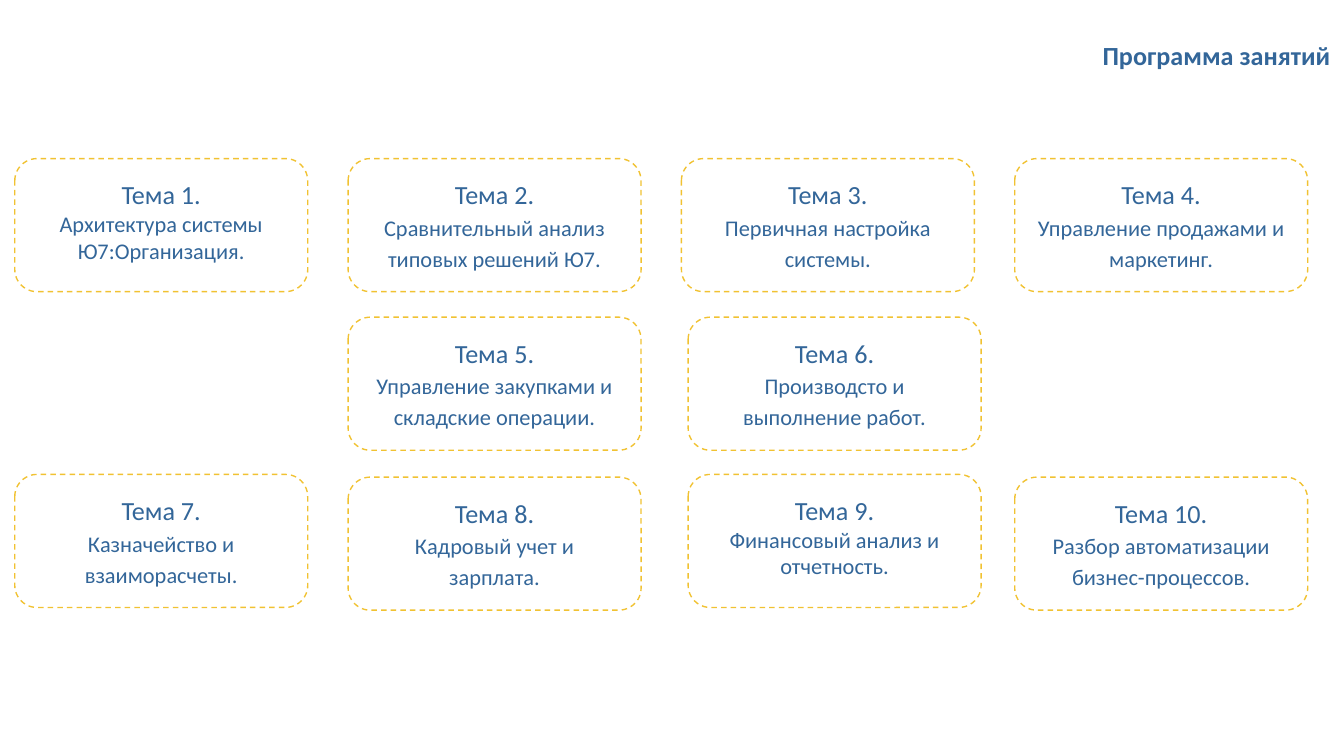
from dataclasses import dataclass

from pptx import Presentation
from pptx.dml.color import RGBColor
from pptx.enum.dml import MSO_LINE
from pptx.enum.shapes import MSO_SHAPE
from pptx.enum.text import MSO_ANCHOR, MSO_AUTO_SIZE, PP_ALIGN
from pptx.slide import Slide
from pptx.text.text import TextFrame
from pptx.util import Inches, Pt


@dataclass(frozen=True)
class Theme:
    font: str = "Calibri"
    ink: RGBColor = RGBColor(0x33, 0x66, 0x99)
    border: RGBColor = RGBColor(0xF1, 0xC2, 0x32)
    paper: RGBColor = RGBColor(0xFF, 0xFF, 0xFF)
    heading_size: float = 14
    body_size: float = 12
    border_width: float = 0.75
    inset: float = 0.1


@dataclass(frozen=True)
class Topic:
    number: int
    subject: str
    column: int
    top: float
    shift: float = 0
    spacing: float = 1.15
    lift: float = 0


THEME = Theme()
SLIDE_WIDTH = 10
SLIDE_HEIGHT = SLIDE_WIDTH * 9 / 16
CARD_WIDTH, CARD_HEIGHT = 2.18, 0.99
FIRST_LEFT, COLUMN_STEP = 0.11, 2.48
TOP_ROW, MIDDLE_ROW, BOTTOM_ROW, LOWERED_ROW = 1.18, 2.36, 3.53, 3.55

TOPICS = [
    Topic(1, "Архитектура системы Ю7:Организация.", 0, TOP_ROW, spacing=1, lift=0.06),
    Topic(2, "Сравнительный анализ типовых решений Ю7.", 1, TOP_ROW),
    Topic(3, "Первичная настройка системы.", 2, TOP_ROW),
    Topic(4, "Управление продажами и маркетинг.", 3, TOP_ROW),
    Topic(5, "Управление закупками и складские операции.", 1, MIDDLE_ROW),
    Topic(6, "Производсто и выполнение работ.", 2, MIDDLE_ROW, shift=0.05),
    Topic(7, "Казначейство и взаиморасчеты.", 0, BOTTOM_ROW),
    Topic(8, "Кадровый учет и зарплата.", 1, LOWERED_ROW),
    Topic(9, "Финансовый анализ и отчетность.", 2, BOTTOM_ROW, shift=0.05, spacing=1, lift=0.06),
    Topic(10, "Разбор автоматизации бизнес-процессов.", 3, LOWERED_ROW),
]


def prepare_frame(frame: TextFrame, anchor: MSO_ANCHOR, lift: float = 0) -> None:
    frame.word_wrap = True
    frame.auto_size = MSO_AUTO_SIZE.NONE
    frame.vertical_anchor = anchor
    frame.margin_left = frame.margin_right = frame.margin_top = Inches(THEME.inset)
    frame.margin_bottom = Inches(THEME.inset + lift)


def format_paragraph(paragraph, size: float, align: PP_ALIGN, bold: bool = False) -> None:
    paragraph.alignment = align
    for run in paragraph.runs:
        run.font.name = THEME.font
        run.font.size = Pt(size)
        run.font.bold = bold
        run.font.color.rgb = THEME.ink


def draw_title(slide: Slide, wording: str) -> None:
    title = slide.shapes.title
    title.left, title.top = Inches(5.33), Inches(0)
    title.width, title.height = Inches(4.67), Inches(0.63)
    prepare_frame(title.text_frame, MSO_ANCHOR.BOTTOM)
    title.text_frame.text = wording
    format_paragraph(title.text_frame.paragraphs[0], THEME.heading_size, PP_ALIGN.RIGHT, bold=True)


def draw_topic(slide: Slide, topic: Topic) -> None:
    left = FIRST_LEFT + topic.column * COLUMN_STEP + topic.shift
    card = slide.shapes.add_shape(
        MSO_SHAPE.ROUNDED_RECTANGLE,
        Inches(left), Inches(topic.top), Inches(CARD_WIDTH), Inches(CARD_HEIGHT),
    )
    card.shadow.inherit = False
    card.fill.solid()
    card.fill.fore_color.rgb = THEME.paper
    card.line.color.rgb = THEME.border
    card.line.width = Pt(THEME.border_width)
    card.line.dash_style = MSO_LINE.DASH
    prepare_frame(card.text_frame, MSO_ANCHOR.MIDDLE, topic.lift)
    card.text_frame.text = f"Тема {topic.number}.\n{topic.subject}"
    heading, subject = card.text_frame.paragraphs
    format_paragraph(heading, THEME.heading_size, PP_ALIGN.CENTER)
    format_paragraph(subject, THEME.body_size, PP_ALIGN.CENTER)
    subject.line_spacing = topic.spacing


def main() -> None:
    deck = Presentation()
    deck.slide_width, deck.slide_height = Inches(SLIDE_WIDTH), Inches(SLIDE_HEIGHT)
    slide = deck.slides.add_slide(deck.slide_layouts[5])
    draw_title(slide, "Программа занятий")
    for topic in TOPICS:
        draw_topic(slide, topic)
    deck.save("out.pptx")


if __name__ == "__main__":
    main()
